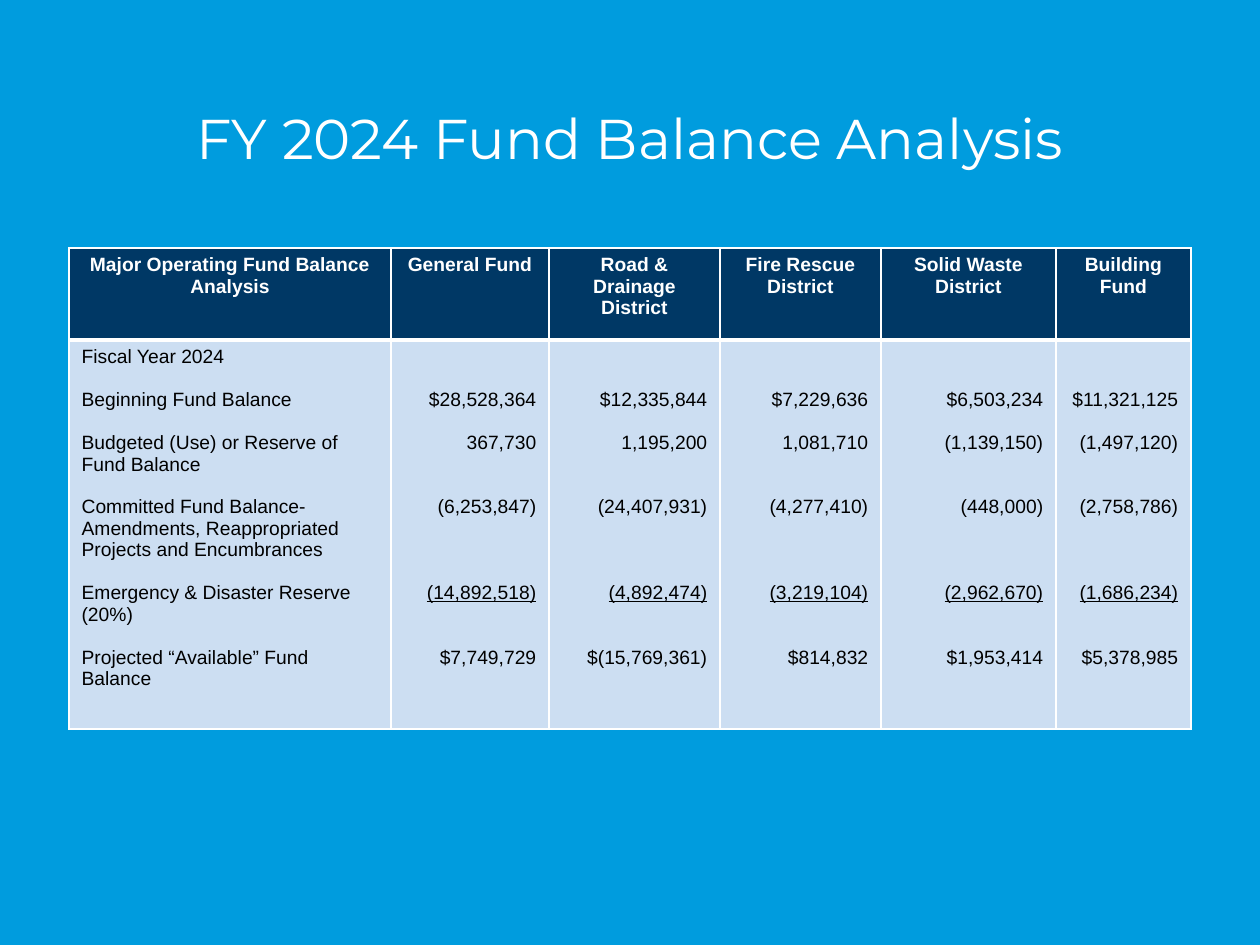
from lxml.etree import SubElement
from pptx import Presentation
from pptx.dml.color import RGBColor
from pptx.enum.text import MSO_ANCHOR, MSO_AUTO_SIZE, PP_ALIGN as Align
from pptx.oxml.ns import qn
from pptx.util import Emu, Pt

TITLE = "FY 2024 Fund Balance Analysis"
HEADINGS = ["Major Operating Fund Balance Analysis", "General Fund",
            "Road & Drainage District", "Fire Rescue District",
            "Solid Waste District", "Building Fund"]
LABELS = ["Fiscal Year 2024", "Beginning Fund Balance",
          "Budgeted (Use) or Reserve of Fund Balance",
          "Committed Fund Balance-Amendments, Reappropriated Projects and Encumbrances",
          "Emergency & Disaster Reserve (20%)",
          "Projected “Available” Fund Balance"]
FUNDS = [
    ["$28,528,364", "367,730", "(6,253,847)", "(14,892,518)", "$7,749,729"],
    ["$12,335,844", "1,195,200", "(24,407,931)", "(4,892,474)", "$(15,769,361)"],
    ["$7,229,636", "1,081,710", "(4,277,410)", "(3,219,104)", "$814,832"],
    ["$6,503,234", "(1,139,150)", "(448,000)", "(2,962,670)", "$1,953,414"],
    ["$11,321,125", "(1,497,120)", "(2,758,786)", "(1,686,234)", "$5,378,985"],
]
COLUMN_WIDTHS = [322, 158, 171, 161, 175, 135]
ROW_HEIGHTS = [92, 389]
LABEL_GAPS = [0, 1, 1, 1, 1, 1]
VALUE_GAPS = [0, 1, 2, 3, 2]
RESERVE_ROW = 3
LINE_POINTS = 12.3
VALUE_TOP = 49
WHITE, BLACK, NAVY, PALE, SKY = "FFFFFF", "000000", "003865", "CCDEF2", "009CDE"


def px(count):
    return Emu(round(count * 914400 / 126))


def color(code):
    return RGBColor.from_string(code)


def write(para, text, size, font, code, align, bold=False, underline=False):
    para.alignment = align
    span = para.add_run()
    span.text = text
    face = span.font
    face.size, face.name, face.bold = Pt(size), font, bold
    face.underline = underline
    face.color.rgb = color(code)


def style_cell(cell, fill, top, bottom):
    properties = cell._tc.get_or_add_tcPr()
    for side, points in (("L", 1), ("R", 1), ("T", top), ("B", bottom)):
        line = SubElement(properties, qn(f"a:ln{side}"), w=str(Pt(points)))
        solid = SubElement(line, qn("a:solidFill"))
        SubElement(solid, qn("a:srgbClr"), val=WHITE)
    cell.fill.solid()
    cell.fill.fore_color.rgb = color(fill)


def fill_body(cell, texts, gaps, align, underlined=None):
    style_cell(cell, PALE, 3, 1)
    frame = cell.text_frame
    for index, (text, gap) in enumerate(zip(texts, gaps)):
        para = frame.add_paragraph() if index else frame.paragraphs[0]
        if gap:
            para.space_before = Pt(gap * LINE_POINTS)
        write(para, text, 11, "Arial", BLACK, align, underline=index == underlined)


def add_title(page):
    box = page.shapes.title
    box.left, box.top, box.width, box.height = map(px, (87, 50, 1086, 183))
    frame = box.text_frame
    frame.auto_size = MSO_AUTO_SIZE.NONE
    frame.vertical_anchor = MSO_ANCHOR.MIDDLE
    para = frame.paragraphs[0]
    para.line_spacing = 0.9
    write(para, TITLE, 32, "Montserrat", WHITE, Align.CENTER)


def add_balances(page):
    table = page.shapes.add_table(
        2, len(HEADINGS), px(69), px(248),
        px(sum(COLUMN_WIDTHS)), px(sum(ROW_HEIGHTS))).table
    table.horz_banding = False
    for column, width in zip(table.columns, COLUMN_WIDTHS):
        column.width = px(width)
    for row, height in zip(table.rows, ROW_HEIGHTS):
        row.height = px(height)
    for index, heading in enumerate(HEADINGS):
        cell = table.cell(0, index)
        style_cell(cell, NAVY, 1, 3)
        write(cell.text_frame.paragraphs[0], heading, 11, "Arial", WHITE,
              Align.CENTER, bold=True)
    fill_body(table.cell(1, 0), LABELS, LABEL_GAPS, Align.LEFT)
    for index, values in enumerate(FUNDS, 1):
        cell = table.cell(1, index)
        cell.margin_top = px(VALUE_TOP)
        fill_body(cell, values, VALUE_GAPS, Align.RIGHT, RESERVE_ROW)


def main():
    """Build the fund balance slide."""
    deck = Presentation()
    deck.slide_width, deck.slide_height = px(1260), px(945)
    page = deck.slides.add_slide(deck.slide_layouts[5])
    page.background.fill.solid()
    page.background.fill.fore_color.rgb = color(SKY)
    add_title(page)
    add_balances(page)
    deck.save("out.pptx")


if __name__ == "__main__":
    main()
